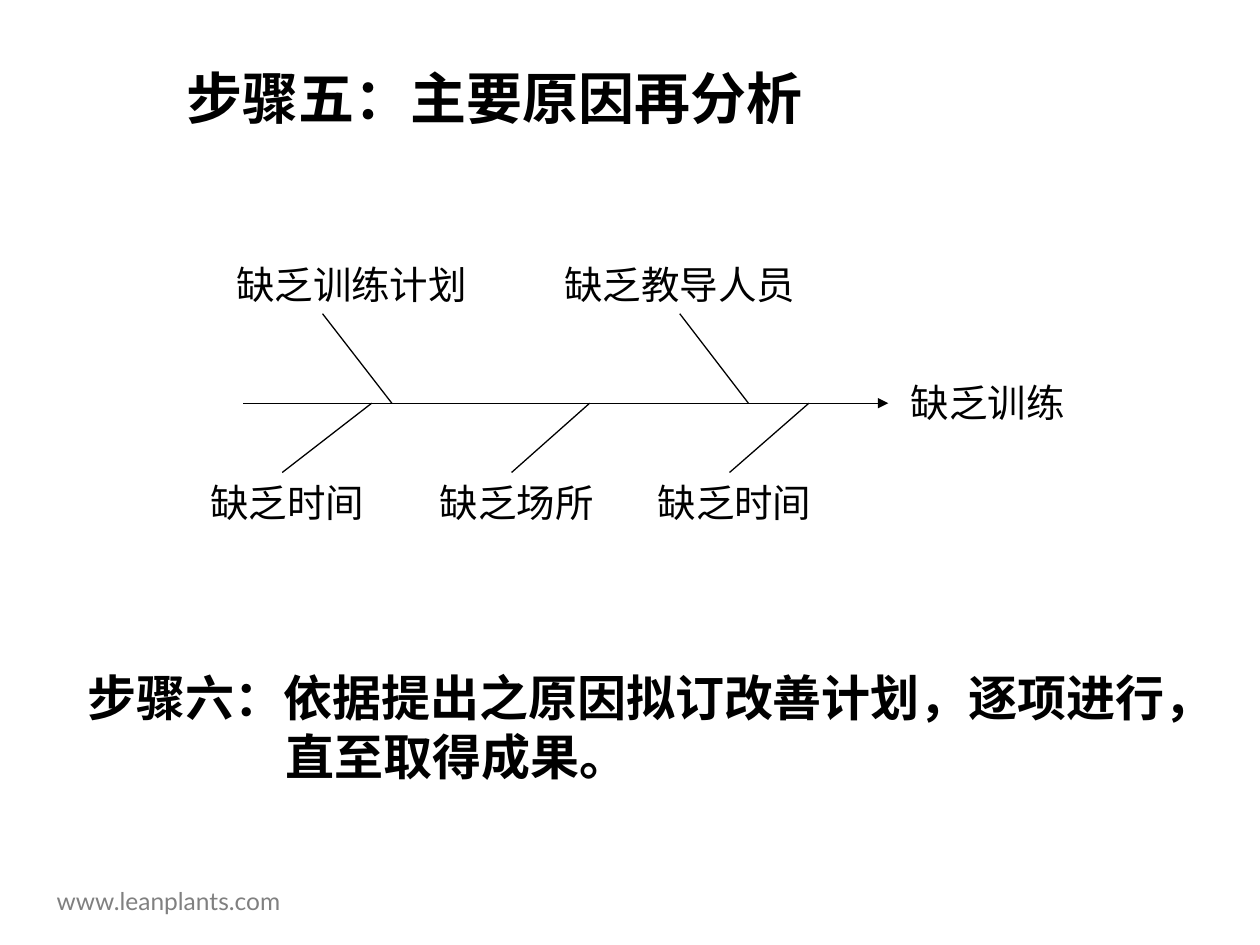
from lxml.etree import SubElement as Sub
from pptx import Presentation as Deck
from pptx.dml.color import RGBColor as Rgb
from pptx.enum.shapes import MSO_CONNECTOR as Link
from pptx.enum.text import MSO_ANCHOR as Anchor, PP_ALIGN as Align
from pptx.oxml.ns import qn
from pptx.util import Inches, Pt


def color(code):
    return Rgb.from_string(code)


class Page:
    ink = "000000"
    face = "Arial"

    def __init__(self, deck):
        self.slide = deck.slides.add_slide(deck.slide_layouts[6])

    def text(self, words, box, size, align=Align.LEFT, hang=None, ink=ink, **style):
        shape = self.slide.shapes.add_textbox(*map(Inches, box))
        frame = shape.text_frame
        frame.word_wrap = True
        frame.vertical_anchor = Anchor.MIDDLE
        para = frame.paragraphs[0]
        para.alignment = align
        if hang:
            left, first = hang
            props = para._p.get_or_add_pPr()
            props.set("marL", str(Inches(left)))
            props.set("indent", str(Inches(first)))
        run = para.add_run()
        run.text = words
        for key, value in ({"name": self.face, "size": Pt(size)} | style).items():
            setattr(run.font, key, value)
        run.font.color.rgb = color(ink)
        return shape

    def label(self, words, left, top, width, align=Align.CENTER):
        return self.text(words, (left, top, width, 0.47), 22, align)

    def line(self, start, end, arrow=False):
        link = self.slide.shapes.add_connector(
            Link.STRAIGHT, *map(Inches, (*start, *end)))
        link.line.width = Pt(0.75)
        link.line.color.rgb = color(self.ink)
        if arrow:
            Sub(link.line._get_or_add_ln(), qn("a:tailEnd"), type="triangle")
        Sub(link._element.spPr, qn("a:effectLst"))
        return link


def main():
    deck = Deck()
    deck.slide_width, deck.slide_height = Inches(10), Inches(7.5)
    page = Page(deck)
    page.text("www.leanplants.com", (0.35, 6.98, 3.82, 0.34), 14,
              ink="808080", name="Lato")
    page.text("步骤五：主要原因再分析", (1.38, 0.41, 7.74, 0.72), 32, bold=True)
    page.text("步骤六：依据提出之原因拟订改善计划，逐项进行，直至取得成果。",
              (0.5, 5.24, 9, 1.05), 28, hang=(1.67, -1.57), bold=True)

    axis, upper, lower = 3.2, 2.02, 3.75
    page.line((1.93, axis), (7.05, axis), arrow=True)
    page.label("缺乏训练", 7.13, 2.96, 1.65, Align.LEFT)

    page.label("缺乏训练计划", 1.69, upper, 2.2)
    page.line((3.11, axis), (2.56, 2.49))
    coach = page.label("缺乏教导人员", 4.37, upper, 2.05)
    page.line((5.94, axis), (5.39, 2.49)).end_connect(coach, 2)

    causes = [("缺乏时间", 1.53, 2.95), ("缺乏场所", 3.35, 4.68),
              ("缺乏时间", 5.08, 6.42)]
    for words, left, joint in causes:
        page.label(words, left, lower, 1.5)
        page.line((joint, axis), (left + 0.71, lower))

    deck.save("out.pptx")


if __name__ == "__main__":
    main()
